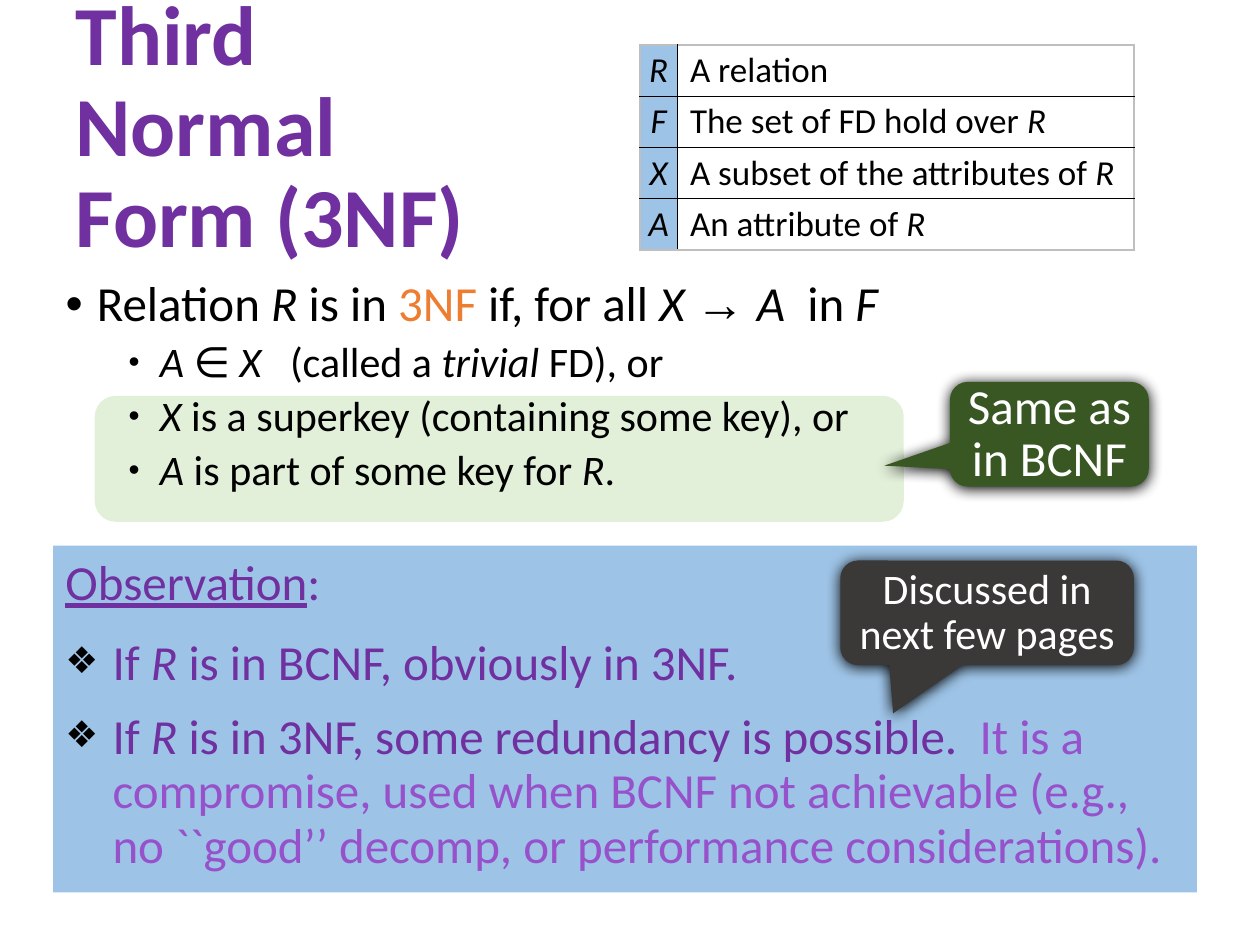
from dataclasses import dataclass

from lxml import etree
from pptx import Presentation
from pptx import util as u
from pptx.dml.color import RGBColor
from pptx.enum import shapes, text
from pptx.oxml import ns


@dataclass(frozen=True)
class Theme:
    font: str = "Calibri"
    symbol_font: str = "Times New Roman"
    black: str = "000000"
    white: str = "FFFFFF"
    purple: str = "7030A0"
    violet: str = "9751CB"
    orange: str = "ED7D31"
    blue: str = "9DC3E6"
    pale_green: str = "E2F0D9"
    dark_green: str = "385723"
    charcoal: str = "3B3838"
    grey: str = "BFBFBF"
    title_size: int = 48
    large: int = 28
    medium: int = 24
    small: int = 20


def add_xml(parent, tag, **attributes):
    return etree.SubElement(parent, ns.qn(tag), attributes)


class SlideBuilder:
    def __init__(self, slide, theme):
        self.slide = slide
        self.theme = theme

    def place(self, shape, box):
        shape.left, shape.top, shape.width, shape.height = map(u.Cm, box)

    def add_runs(self, paragraph, parts, size, color, bold=False):
        for part in parts:
            content, override = part if isinstance(part, tuple) else (part, {})
            for index, piece in enumerate(content.split("*")):
                if not piece:
                    continue
                run = paragraph.add_run()
                run.text = piece
                font = run.font
                font.name = override.get("font", self.theme.font)
                font.size = u.Pt(size)
                font.bold = bold
                font.italic = index % 2 == 1
                font.underline = override.get("underline", False)
                font.color.rgb = RGBColor.from_string(override.get("color", color))

    def space(self, paragraph, before=0, after=0, line=1.0):
        paragraph.space_before = u.Pt(before)
        paragraph.space_after = u.Pt(after)
        paragraph.line_spacing = line

    def indent(self, paragraph, left, hanging, bullet=None, scale=100):
        properties = paragraph._p.get_or_add_pPr()
        properties.set("marL", str(u.Cm(left)))
        properties.set("indent", str(-u.Cm(hanging)))
        if bullet is None:
            add_xml(properties, "a:buNone")
            return
        color = add_xml(properties, "a:buClr")
        add_xml(color, "a:srgbClr", val=self.theme.black)
        add_xml(properties, "a:buSzPct", val=str(scale * 1000))
        add_xml(properties, "a:buFont", typeface="Arial")
        add_xml(properties, "a:buChar", char=bullet)

    def title(self, content, box):
        shape = self.slide.shapes.title
        self.place(shape, box)
        frame = shape.text_frame
        frame.auto_size = text.MSO_AUTO_SIZE.NONE
        frame.vertical_anchor = text.MSO_ANCHOR.MIDDLE
        paragraph = frame.paragraphs[0]
        paragraph.alignment = text.PP_ALIGN.LEFT
        self.space(paragraph, line=0.9)
        self.add_runs(paragraph, [content], self.theme.title_size, self.theme.purple, True)

    def body(self, heading, conditions, box):
        shape = self.slide.placeholders[1]
        self.place(shape, box)
        frame = shape.text_frame
        frame.auto_size = text.MSO_AUTO_SIZE.NONE
        paragraph = frame.paragraphs[0]
        self.space(paragraph, before=10, line=0.9)
        self.indent(paragraph, 0.63, 0.63, "•")
        self.add_runs(paragraph, heading, self.theme.large, self.theme.black)
        for condition in conditions:
            paragraph = frame.add_paragraph()
            paragraph.level = 1
            self.space(paragraph, before=5, line=0.9)
            self.indent(paragraph, 1.9, 0.63, "•", 75)
            self.add_runs(paragraph, [condition], self.theme.medium, self.theme.black)

    def panel(self, kind, box, color):
        shape = self.slide.shapes.add_shape(kind, *map(u.Cm, box))
        shape.shadow.inherit = False
        shape.fill.solid()
        shape.fill.fore_color.rgb = RGBColor.from_string(color)
        shape.line.fill.background()
        shape.text_frame.word_wrap = True
        return shape

    def highlight(self, box):
        shape = self.panel(shapes.MSO_SHAPE.ROUNDED_RECTANGLE, box, self.theme.pale_green)
        self.slide.shapes._spTree.insert(2, shape._element)

    def callout(self, content, box, color, pointer, size, line, margin):
        shape = self.panel(shapes.MSO_SHAPE.ROUNDED_RECTANGULAR_CALLOUT, box, color)
        for index, value in enumerate(pointer):
            shape.adjustments[index] = value
        effects = shape._element.spPr.find(ns.qn("a:effectLst"))
        shadow = add_xml(effects, "a:outerShdw", blurRad=str(u.Pt(8.5)),
                         dist=str(u.Pt(1)), dir="5400000", rotWithShape="0")
        add_xml(shadow, "a:srgbClr", val=self.theme.black)
        frame = shape.text_frame
        frame.margin_left = frame.margin_right = u.Cm(margin)
        frame.vertical_anchor = text.MSO_ANCHOR.MIDDLE
        paragraph = frame.paragraphs[0]
        paragraph.alignment = text.PP_ALIGN.CENTER
        self.space(paragraph, line=u.Pt(line))
        self.add_runs(paragraph, [content], size, self.theme.white)

    def observation(self, heading, points, box):
        shape = self.panel(shapes.MSO_SHAPE.RECTANGLE, box, self.theme.blue)
        frame = shape.text_frame
        frame.vertical_anchor = text.MSO_ANCHOR.TOP
        rows = [(heading, None, 6, 1.0), (points[0], "❖", 6, 1.0),
                (points[1], "❖", 0, u.Pt(31))]
        for index, (parts, bullet, after, line) in enumerate(rows):
            paragraph = frame.add_paragraph() if index else frame.paragraphs[0]
            paragraph.alignment = text.PP_ALIGN.LEFT
            self.space(paragraph, 5.6, after, line)
            self.indent(paragraph, 0.95, 0.95, bullet, 75)
            self.add_runs(paragraph, parts, self.theme.large, self.theme.purple)

    def border(self, cell, colors):
        properties = cell._tc.get_or_add_tcPr()
        for index, (side, color) in enumerate(zip("LRTB", colors)):
            line = etree.Element(ns.qn(f"a:ln{side}"), w=str(u.Pt(1)))
            fill = add_xml(line, "a:solidFill")
            add_xml(fill, "a:srgbClr", val=color)
            properties.insert(index, line)

    def table(self, rows, box, widths):
        frame = self.slide.shapes.add_table(len(rows), len(widths), *map(u.Cm, box))
        table = frame.table
        table.first_row = table.horz_banding = False
        for column, width in zip(table.columns, widths):
            column.width = u.Cm(width)
        black, grey = self.theme.black, self.theme.grey
        for row_index, row in enumerate(rows):
            for column_index, content in enumerate(row):
                cell = table.cell(row_index, column_index)
                cell.margin_right = cell.margin_top = cell.margin_bottom = 0
                cell.margin_left = u.Cm(0.25 * column_index)
                cell.vertical_anchor = text.MSO_ANCHOR.MIDDLE
                paragraph = cell.text_frame.paragraphs[0]
                if column_index == 0:
                    paragraph.alignment = text.PP_ALIGN.CENTER
                    cell.fill.solid()
                    cell.fill.fore_color.rgb = RGBColor.from_string(self.theme.blue)
                else:
                    cell.fill.background()
                self.add_runs(paragraph, [content], self.theme.small, black)
                self.border(cell, [black if column_index else grey,
                                   grey if column_index else black,
                                   black if row_index else grey,
                                   black if row_index < len(rows) - 1 else grey])


def main():
    theme = Theme()
    presentation = Presentation()
    presentation.slide_width, presentation.slide_height = u.Cm(25.4), u.Cm(19.05)
    builder = SlideBuilder(presentation.slides.add_slide(presentation.slide_layouts[1]), theme)
    builder.highlight((1.91, 7.98, 16.31, 2.54))
    builder.title("Third Normal Form (3NF)", (1.27, 1.07, 9.65, 3.07))
    builder.body(
        ["Relation *R* is in ", ("3NF", {"color": theme.orange}), " if, for all *X *",
         ("→ ", {"font": theme.symbol_font}), "*A*  in *F*"],
        ["*A *∈ *X*   (called a *trivial* FD), or",
         "*X* is a superkey (containing some key), or",
         "*A* is part of some key for *R*."],
        (1.07, 5.51, 23.06, 5.46))
    builder.callout("Same as in BCNF", (19.15, 7.7, 4.01, 2.11), theme.dark_green,
                    (-0.83, 0.3, 0.17), theme.large, 30, 0.25)
    builder.table([("*R*", "A relation"), ("*F*", "The set of FD hold over *R*"),
                   ("*X*", "A subset of the attributes of *R*"),
                   ("*A*", "An attribute of *R*")],
                  (12.9, 0.91, 9.96, 4.13), (0.76, 9.2))
    builder.observation(
        [("Observation", {"underline": True}), ":"],
        [["If *R* is in BCNF, obviously in 3NF."],
         ["If *R* is in 3NF, some redundancy is possible.  ",
          ("It is a compromise, used when BCNF not achievable (e.g., no ``good’’ decomp, "
           "or performance considerations).", {"color": theme.violet})]],
        (1.07, 11, 23.06, 6.99))
    builder.callout("Discussed in next few pages", (16.94, 11.3, 5.92, 2.11), theme.charcoal,
                    (-0.32, 0.96, 0.17), theme.medium, 26, 0.13)
    presentation.save("out.pptx")


if __name__ == "__main__":
    main()
